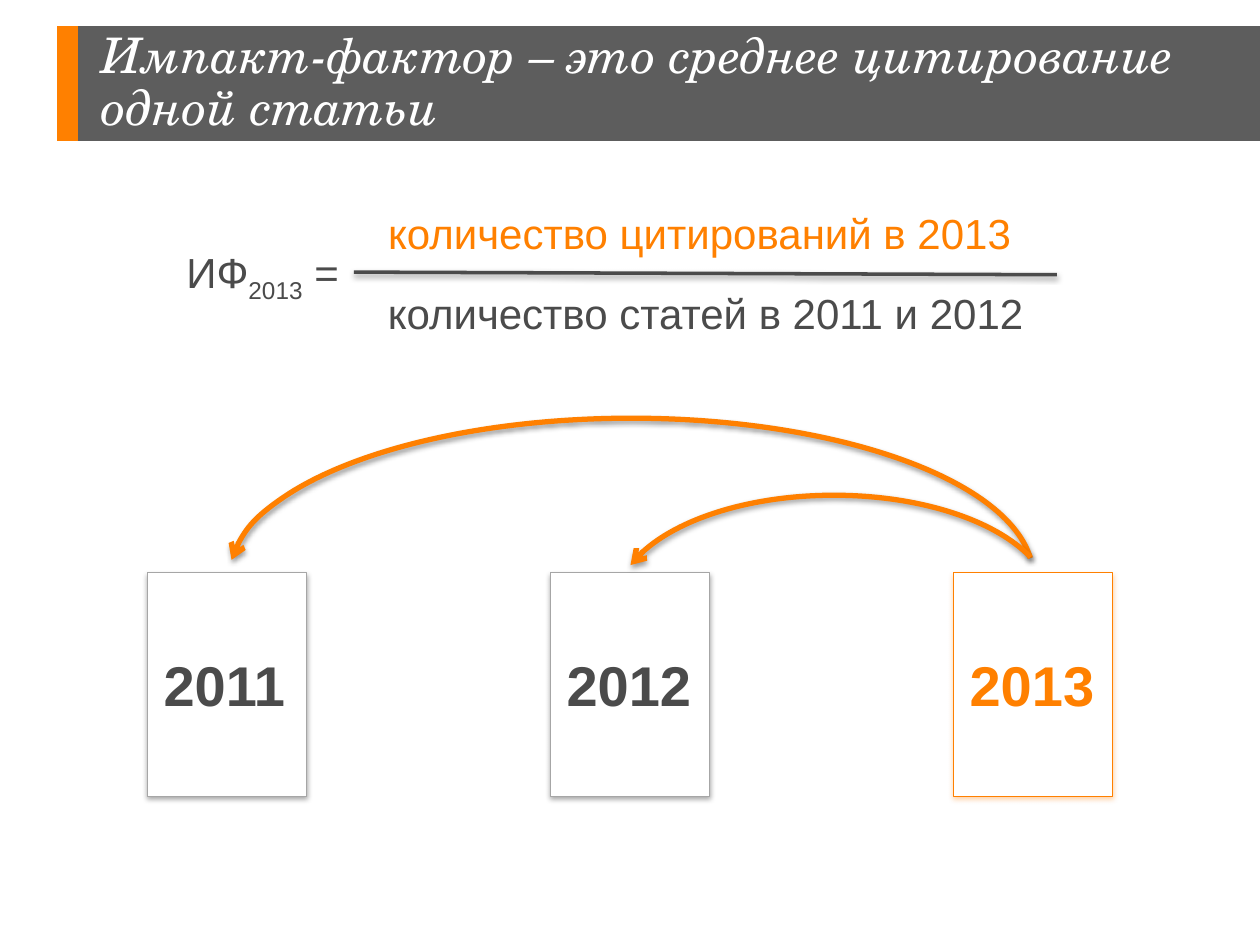
from pptx import Presentation
from pptx import util as u
from pptx.dml.color import RGBColor
from pptx.enum import shapes, text
from pptx.oxml import parse_xml
from pptx.oxml.ns import nsdecls

HUES = {"orange": "FF8000", "bar": "5D5D5D", "ink": "4B4B4B",
        "edge": "A6A6A6", "white": "FFFFFF", "black": "000000"}


class Deck:
    font = "Arial"
    serif = "TeX Gyre Schola"

    def __init__(self):
        self.prs = Presentation()
        self.prs.slide_width, self.prs.slide_height = u.Pt(720), u.Pt(540)
        self.page = self.prs.slides.add_slide(self.prs.slide_layouts[6])

    def hue(self, name):
        return RGBColor.from_string(HUES[name])

    def shade(self, item, name=None, alpha=38, dist=1.6):
        cast = ""
        if name:
            cast = (f'<a:outerShdw blurRad="{u.Pt(3.1)}" dist="{u.Pt(dist)}" dir="5400000" '
                    f'rotWithShape="0"><a:srgbClr val="{HUES[name]}">'
                    f'<a:alpha val="{alpha * 1000}"/></a:srgbClr></a:outerShdw>')
        item._element.spPr.append(
            parse_xml(f'<a:effectLst {nsdecls("a")}>{cast}</a:effectLst>'))

    def stroke(self, item, name, width):
        item.line.color.rgb = self.hue(name)
        item.line.width = u.Pt(width)

    def style(self, run, size, name, font=None, bold=False, slant=False):
        run.font.name = font or self.font
        run.font.size = u.Pt(size)
        run.font.bold, run.font.italic = bold, slant
        run.font.color.rgb = self.hue(name)

    def rect(self, box, fill, edge=None, home=None):
        item = (home or self.page).shapes.add_shape(
            shapes.MSO_SHAPE.RECTANGLE, *map(u.Pt, box))
        item.fill.solid()
        item.fill.fore_color.rgb = self.hue(fill)
        if edge:
            self.stroke(item, edge, 0.25)
        else:
            item.line.fill.background()
        return item

    def title(self, box, words):
        item = self.rect(box, "bar")
        self.shade(item)
        frame = item.text_frame
        frame.text = words
        frame.word_wrap = True
        frame.vertical_anchor = text.MSO_ANCHOR.MIDDLE
        frame.margin_left = frame.margin_right = 0
        frame.margin_top = frame.margin_bottom = 0
        para = frame.paragraphs[0]
        para.alignment = text.PP_ALIGN.LEFT
        para.line_spacing = 0.9
        para._p.get_or_add_pPr().set("marL", str(u.Pt(13.7)))
        self.style(para.runs[0], 28, "white", self.serif, slant=True)

    def label(self, box, parts, name, size=24, bold=False, mid=False, home=None):
        item = (home or self.page).shapes.add_textbox(*map(u.Pt, box))
        frame = item.text_frame
        frame.word_wrap = False
        frame.auto_size = text.MSO_AUTO_SIZE.SHAPE_TO_FIT_TEXT
        para = frame.paragraphs[0]
        para.alignment = text.PP_ALIGN.CENTER if mid else text.PP_ALIGN.LEFT
        for words, base in parts:
            run = para.add_run()
            run.text = words
            self.style(run, size, name, bold=bold)
            if base:
                run.font._element.set("baseline", str(base * 1000))

    def card(self, left, year, name, edge, cast):
        home = self.page.shapes.add_group_shape()
        item = self.rect((left, 327, 90.9, 128), "white", edge, home)
        self.shade(item, cast, 35, 1.8)
        self.label((left + 2.2, 368, 86.5, 46), [(year, 0)], name, 32, True, home=home)

    def arc(self, box, start, end):
        item = self.page.shapes.add_shape(shapes.MSO_SHAPE.ARC, *map(u.Pt, box))
        item.adjustments[0], item.adjustments[1] = start, end
        item.fill.background()
        self.stroke(item, "orange", 3)
        item.line._get_or_add_ln().append(
            parse_xml(f'<a:headEnd {nsdecls("a")} type="arrow"/>'))
        self.shade(item, "black")

    def line(self, ends, name, width, cast=None):
        item = self.page.shapes.add_connector(
            shapes.MSO_CONNECTOR.STRAIGHT, *map(u.Pt, ends))
        self.stroke(item, name, width)
        self.shade(item, cast)


def main():
    deck = Deck()
    deck.line((38.7, 15, 38.7, 80.5), "orange", 12)
    deck.title((44.6, 15, 675.4, 65.5), "Импакт-фактор – это среднее цитирование одной статьи")

    cards = [("2011", "ink", "edge", "black"),
             ("2012", "ink", "edge", "black"),
             ("2013", "orange", "orange", "orange")]
    for i, (year, name, edge, cast) in enumerate(cards):
        deck.card(84.2 + 230.3 * i, year, name, edge, cast)

    deck.arc((131, 239, 459.4, 181.4), 109.47, 214.38)
    deck.arc((352, 283, 249.1, 124.6), 114.54, 207.93)

    deck.label((99.4, 137.5, 107.3, 36), [("ИФ", 0), ("2013", -25), (" =", 0)], "ink")
    deck.label((213.8, 115.2, 378.7, 36), [("количество цитирований в 2013 ", 0)],
               "orange", mid=True)
    deck.label((211.7, 160.6, 383, 36), [("количество статей в 2011 и 2012", 0)],
               "ink", mid=True)
    deck.line((202.3, 155.5, 604, 157), "ink", 2, "black")
    deck.prs.save("out.pptx")


if __name__ == "__main__":
    main()
